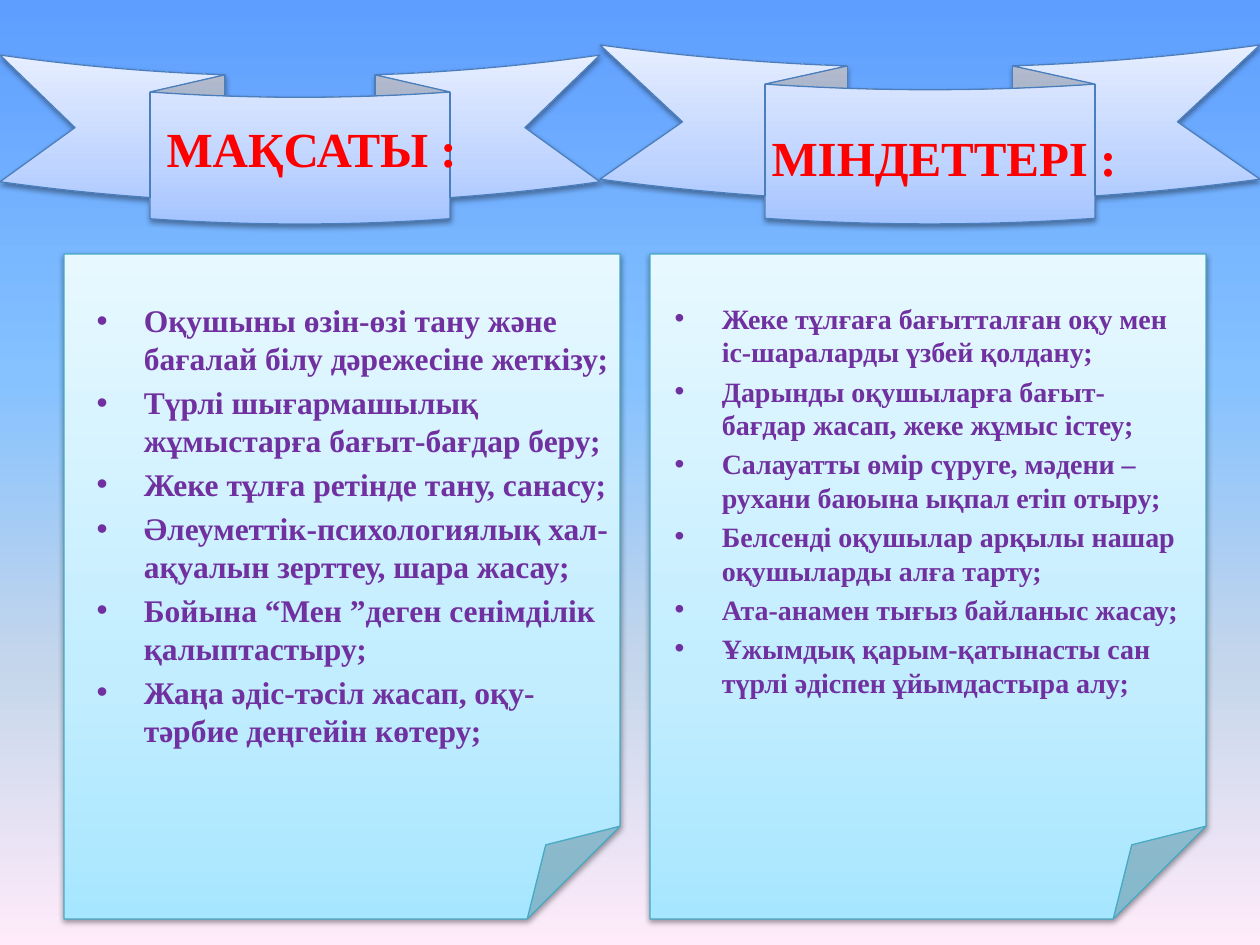
from dataclasses import dataclass

from lxml import etree
from pptx import Presentation
from pptx.dml.color import RGBColor
from pptx.enum.shapes import MSO_SHAPE
from pptx.enum.text import MSO_ANCHOR, MSO_AUTO_SIZE
from pptx.oxml.ns import qn
from pptx.util import Emu, Pt

PAPER = MSO_SHAPE.FOLDED_CORNER
RIBBON = MSO_SHAPE.CURVED_DOWN_RIBBON
BOTTOM, TOP = MSO_ANCHOR.BOTTOM, MSO_ANCHOR.TOP
NO_FIT = MSO_AUTO_SIZE.NONE
COMPARISON_LAYOUT = 4
EMU_PER_PX = 914400 / 126
UPWARD, DOWNWARD = 90, 270


@dataclass(frozen=True)
class Theme:
    font: str = "Times New Roman"
    heading: str = "FF0000"
    heading_size: int = 28
    body: str = "7030A0"
    sky: tuple = ((0, "5E9EFF"), (40, "85C2FF"), (70, "C4D6EB"), (100, "FFEBFA"))
    paper: tuple = ((0, "A7E6FF"), (35, "C1EDFF"), (100, "E7F8FF"))
    paper_line: str = "46AAC5"
    ribbon: tuple = ((0, "A4C4FF"), (35, "BFD4FF"), (100, "E6EEFF"))
    ribbon_line: str = "4B7EBC"
    line_width: float = 0.75


THEME = Theme()

# Boxes are left, top, width, height in px.
COLUMNS = [
    {
        "heading": "МАҚСАТЫ :",
        "items": [
            "Оқушыны өзін-өзі тану және бағалай білу дәрежесіне жеткізу;",
            "Түрлі шығармашылық жұмыстарға бағыт-бағдар беру;",
            "Жеке тұлға ретінде тану, санасу;",
            "Әлеуметтік-психологиялық хал- ақуалын зерттеу, шара жасау;",
            "Бойына “Мен ”деген сенімділік қалыптастыру;",
            "Жаңа әдіс-тәсіл жасап, оқу-тәрбие деңгейін көтеру;",
        ],
        "size": 18,
        "paper_box": (64, 254, 556, 665),
        "ribbon_box": (0, 55, 600, 169),
        "heading_box": (154, 106, 536, 78),
        "list_box": (84, 295, 556, 544),
        "placeholders": (1, 2),
    },
    {
        "heading": "МІНДЕТТЕРІ :",
        "items": [
            "Жеке тұлғаға бағытталған оқу мен іс-шараларды үзбей қолдану;",
            "Дарынды оқушыларға бағыт-бағдар жасап, жеке жұмыс істеу;",
            "Салауатты өмір сүруге, мәдени –рухани баюына ықпал етіп отыру;",
            "Белсенді оқушылар арқылы нашар оқушыларды алға тарту;",
            "Ата-анамен тығыз байланыс жасау;",
            "Ұжымдық қарым-қатынасты сан түрлі әдіспен ұйымдастыра алу;",
        ],
        "size": 16,
        "paper_box": (650, 254, 556, 665),
        "ribbon_box": (600, 45, 660, 179),
        "heading_box": (759, 115, 536, 78),
        "list_box": (662, 295, 536, 534),
        "placeholders": (3, 4),
    },
]


def px(length):
    return Emu(round(length * EMU_PER_PX))


def paint_gradient(fill, owner, stops, angle):
    """Give fill any number of stops; owner is the element that holds it."""
    fill.gradient()
    fill.gradient_angle = angle
    stop_list = owner.find(".//" + qn("a:gsLst"))
    for old_stop in list(stop_list):
        stop_list.remove(old_stop)
    for percent, color in stops:
        stop = etree.SubElement(stop_list, qn("a:gs"), pos=str(percent * 1000))
        etree.SubElement(stop, qn("a:srgbClr"), val=color)


def add_soft_shadow(shape):
    shape.shadow.inherit = False
    effects = shape.element.spPr.find(qn("a:effectLst"))
    shadow = etree.SubElement(effects, qn("a:outerShdw"), blurRad="40000",
                              dist="20000", dir="5400000", rotWithShape="0")
    color = etree.SubElement(shadow, qn("a:srgbClr"), val="000000")
    etree.SubElement(color, qn("a:alpha"), val="38000")


def add_panel(page, kind, box, stops, line_color):
    panel = page.shapes.add_shape(kind, *map(px, box))
    paint_gradient(panel.fill, panel.element, stops, UPWARD)
    panel.line.color.rgb = RGBColor.from_string(line_color)
    panel.line.width = Pt(THEME.line_width)
    add_soft_shadow(panel)


def write_text(holder, lines, *, box, size, color, anchor):
    holder.left, holder.top, holder.width, holder.height = map(px, box)
    frame = holder.text_frame
    frame.word_wrap = True
    frame.auto_size = NO_FIT
    frame.vertical_anchor = anchor
    for index, line in enumerate(lines):
        para = frame.add_paragraph() if index else frame.paragraphs[0]
        span = para.add_run()
        span.text = line
        span.font.name = THEME.font
        span.font.size = Pt(size)
        span.font.bold = True
        span.font.color.rgb = RGBColor.from_string(color)


def main():
    deck = Presentation()
    deck.slide_width, deck.slide_height = px(1260), px(945)
    page = deck.slides.add_slide(deck.slide_layouts[COMPARISON_LAYOUT])
    paint_gradient(page.background.fill, page.element, THEME.sky, DOWNWARD)

    tree = page.shapes.element
    tree.remove(page.shapes.title.element)
    holders = {holder.placeholder_format.idx: holder for holder in page.placeholders}

    for column in reversed(COLUMNS):
        add_panel(page, PAPER, column["paper_box"], THEME.paper, THEME.paper_line)
    for column in reversed(COLUMNS):
        add_panel(page, RIBBON, column["ribbon_box"], THEME.ribbon, THEME.ribbon_line)

    for holder in holders.values():
        tree.append(holder.element)  # bring text in front of the panels
    for column in COLUMNS:
        heading, items = (holders[index] for index in column["placeholders"])
        write_text(heading, [column["heading"]], box=column["heading_box"],
                   size=THEME.heading_size, color=THEME.heading, anchor=BOTTOM)
        write_text(items, column["items"], box=column["list_box"],
                   size=column["size"], color=THEME.body, anchor=TOP)

    deck.save("out.pptx")


if __name__ == "__main__":
    main()
